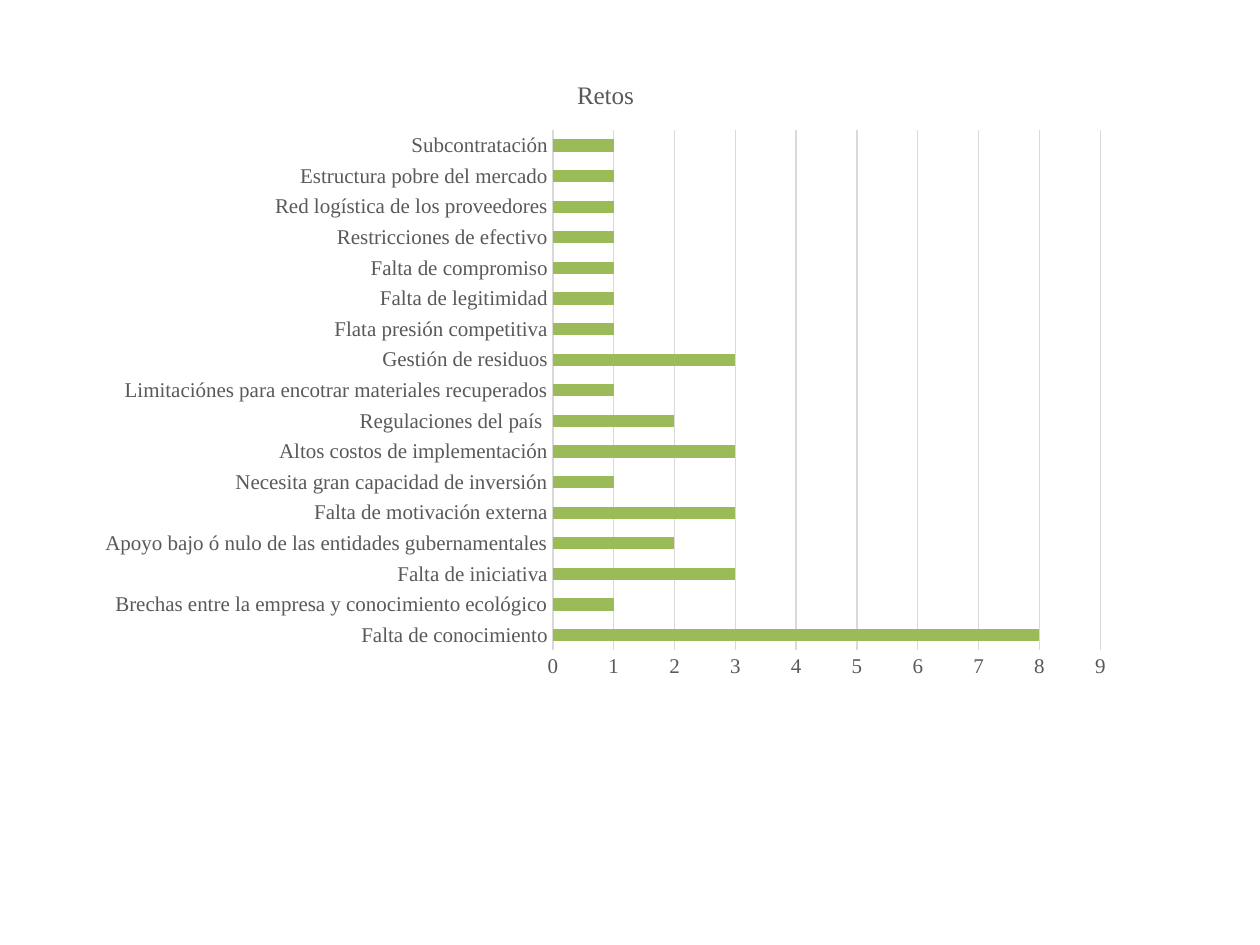
"""Build a slide with a bar chart of the challenges (Retos) by number of mentions."""
from pptx import Presentation
from pptx import util as u
from pptx.chart.data import CategoryChartData
from pptx.dml.color import RGBColor
from pptx.enum import chart as charts

TITLE = "Retos"
CHALLENGES = [
    ("Falta de conocimiento", 8),
    ("Brechas entre la empresa y conocimiento ecológico", 1),
    ("Falta de iniciativa", 3),
    ("Apoyo bajo ó nulo de las entidades gubernamentales", 2),
    ("Falta de motivación externa", 3),
    ("Necesita gran capacidad de inversión", 1),
    ("Altos costos de implementación", 3),
    ("Regulaciones del país ", 2),
    ("Limitaciónes para encotrar materiales recuperados", 1),
    ("Gestión de residuos", 3),
    ("Flata presión competitiva", 1),
    ("Falta de legitimidad", 1),
    ("Falta de compromiso", 1),
    ("Restricciones de efectivo", 1),
    ("Red logística de los proveedores", 1),
    ("Estructura pobre del mercado", 1),
    ("Subcontratación", 1),
]
SLIDE_SIZE = (720, 540)
CHART_BOX = (48.24, 31.68, 595.44, 362.88)
TEXT, GRID, BAR = "595959", "D9D9D9", "9BBB59"
FONT = {"name": "Times New Roman", "bold": False}
AXIS_FORMAT = {
    "major_tick_mark": charts.XL_TICK_MARK.NONE,
    "minor_tick_mark": charts.XL_TICK_MARK.NONE,
    "tick_label_position": charts.XL_TICK_LABEL_POSITION.NEXT_TO_AXIS,
}
SCALE_FORMAT = {
    "minimum_scale": 0,
    "maximum_scale": 9,
    "major_unit": 1,
    "has_major_gridlines": True,
}


def apply(target, values):
    for name, value in values.items():
        setattr(target, name, value)


def color(hex_value):
    return RGBColor.from_string(hex_value)


def format_font(font, size):
    apply(font, {**FONT, "size": u.Pt(size)})
    font.color.rgb = color(TEXT)


def format_line(line):
    line.width = u.Pt(0.75)
    line.color.rgb = color(GRID)


def add_challenge_chart(slide):
    data = CategoryChartData()
    data.categories = [label for label, _ in CHALLENGES]
    data.add_series("Series 1", [count for _, count in CHALLENGES])
    chart = slide.shapes.add_chart(
        charts.XL_CHART_TYPE.BAR_STACKED, *map(u.Pt, CHART_BOX), data
    ).chart
    format_font(chart.font, 12)
    apply(chart, {"has_legend": False, "has_title": True})

    title = chart.chart_title
    title.include_in_layout = False
    title.text_frame.text = TITLE
    format_font(title.text_frame.paragraphs[0].runs[0].font, 14.4)

    plot = chart.plots[0]
    apply(plot, {"gap_width": 150, "overlap": 100, "vary_by_categories": False})
    series = plot.series[0]
    series.invert_if_negative = False
    series.format.fill.solid()
    series.format.fill.fore_color.rgb = color(BAR)

    for axis in (chart.category_axis, chart.value_axis):
        apply(axis, AXIS_FORMAT)
        format_font(axis.tick_labels.font, 12)
    apply(chart.value_axis, SCALE_FORMAT)
    format_line(chart.category_axis.format.line)
    format_line(chart.value_axis.major_gridlines.format.line)
    chart.value_axis.format.line.fill.background()


def main():
    presentation = Presentation()
    presentation.slide_width, presentation.slide_height = map(u.Pt, SLIDE_SIZE)
    slide = presentation.slides.add_slide(presentation.slide_layouts.get_by_name("Blank"))
    add_challenge_chart(slide)
    presentation.save("out.pptx")


if __name__ == "__main__":
    main()
